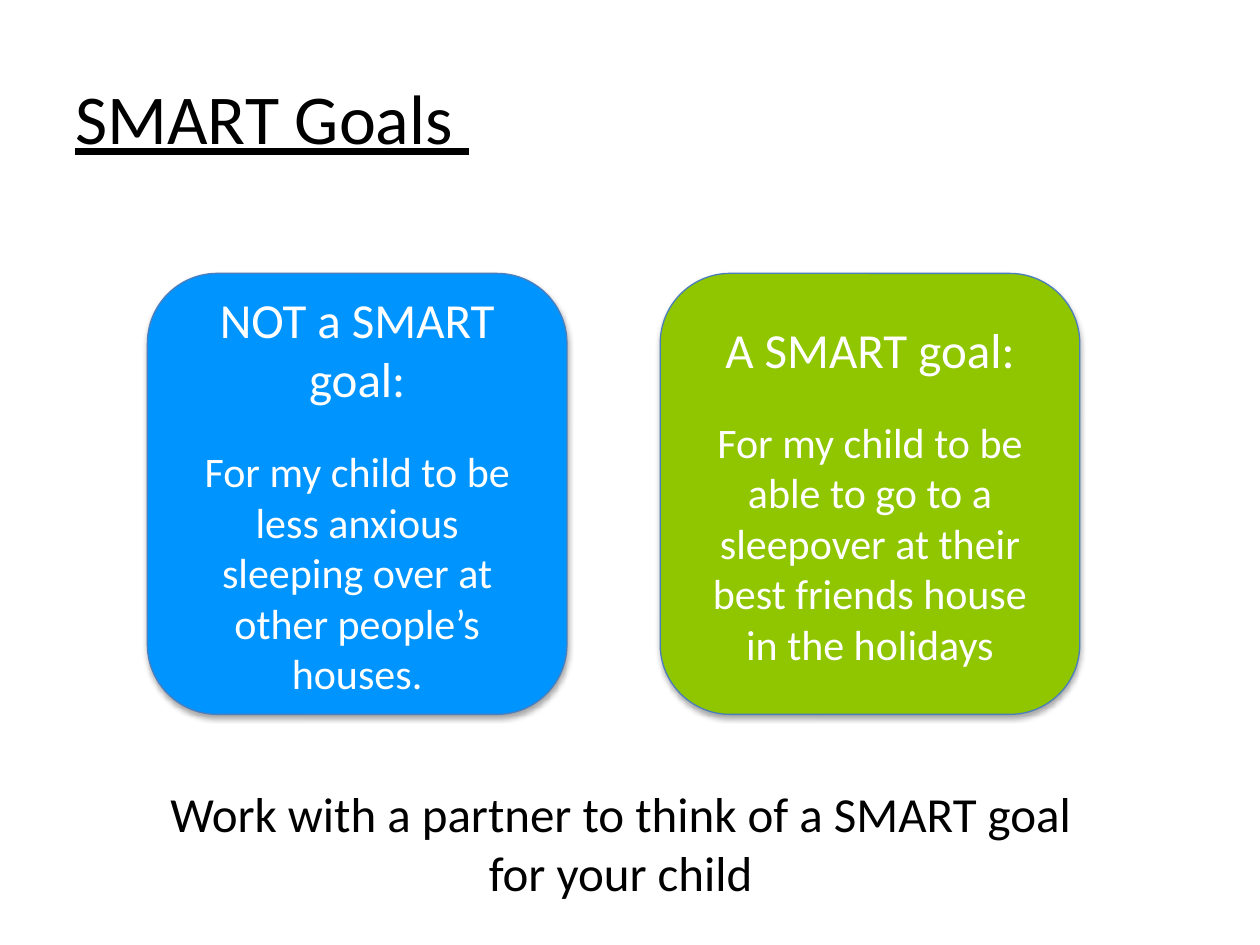
from lxml import etree
from pptx import Presentation
from pptx.dml.color import RGBColor
from pptx.enum import shapes, text
from pptx.oxml import ns
from pptx.util import Inches, Pt

BLACK = RGBColor(0x00, 0x00, 0x00)
WHITE = RGBColor(0xFF, 0xFF, 0xFF)
BLUE = RGBColor(0x00, 0x94, 0xFF)
GREEN = RGBColor(0x8F, 0xC6, 0x00)
OUTLINE = RGBColor(0x4B, 0x7E, 0xBC)
FONT = "Calibri"


def style_font(p, size, color):
    font = p.runs[0].font
    font.name, font.size, font.color.rgb = FONT, Pt(size), color
    return font


def add_text(s, box, content, size):
    tb = s.shapes.add_textbox(*map(Inches, box))
    tf = tb.text_frame
    tf.word_wrap = True
    tf.text = content
    style_font(tf.paragraphs[0], size, BLACK)
    return tf


def add_title(s, box, content):
    tf = add_text(s, box, content, 40)
    tf.vertical_anchor = text.MSO_ANCHOR.MIDDLE
    tf.paragraphs[0].runs[0].font.underline = True


def add_task(s, box, content):
    tf = add_text(s, box, content, 28)
    tf.paragraphs[0].alignment = text.PP_ALIGN.CENTER


def add_soft_shadow(sp):
    """Put a faint shadow straight below the shape."""
    sp.shadow.inherit = False
    effects = sp._element.spPr.find(ns.qn("a:effectLst"))
    shadow = etree.SubElement(effects, ns.qn("a:outerShdw"), blurRad=str(Pt(3.1)),
                              dist=str(Pt(1.8)), dir="5400000", rotWithShape="0")
    color = etree.SubElement(shadow, ns.qn("a:srgbClr"), val="000000")
    etree.SubElement(color, ns.qn("a:alpha"), val="35000")


def add_goal_card(s, box, fill, heading, goal):
    sp = s.shapes.add_shape(shapes.MSO_SHAPE.ROUNDED_RECTANGLE, *map(Inches, box))
    sp.fill.solid()
    sp.fill.fore_color.rgb = fill
    sp.line.color.rgb = OUTLINE
    sp.line.width = Pt(0.75)
    add_soft_shadow(sp)
    tf = sp.text_frame
    tf.word_wrap = True
    tf.vertical_anchor = text.MSO_ANCHOR.MIDDLE
    tf.text = f"{heading}\n{goal}"
    for p, size in zip(tf.paragraphs, (28, 24)):
        p.alignment = text.PP_ALIGN.CENTER
        style_font(p, size, WHITE)
    tf.paragraphs[1].space_before = Pt(22)


def main():
    prs = Presentation()
    prs.slide_width, prs.slide_height = Inches(10), Inches(7.5)
    s = prs.slides.add_slide(prs.slide_layouts[6])
    add_title(s, (0.5, 0.3, 5.52, 1.25), "SMART Goals ")
    add_task(s, (1.07, 6.17, 7.71, 1.04),
             "Work with a partner to think of a SMART goal for your child")
    cards = [
        (BLUE, "NOT a SMART goal:",
         "For my child to be less anxious sleeping over at other people’s houses."),
        (GREEN, "A SMART goal:",
         "For my child to be able to go to a sleepover at their best friends house "
         "in the holidays"),
    ]
    for i, card in enumerate(cards):
        add_goal_card(s, (1.17 + i * 4.07, 2.17, 3.33, 3.5), *card)
    prs.save("out.pptx")


if __name__ == "__main__":
    main()
